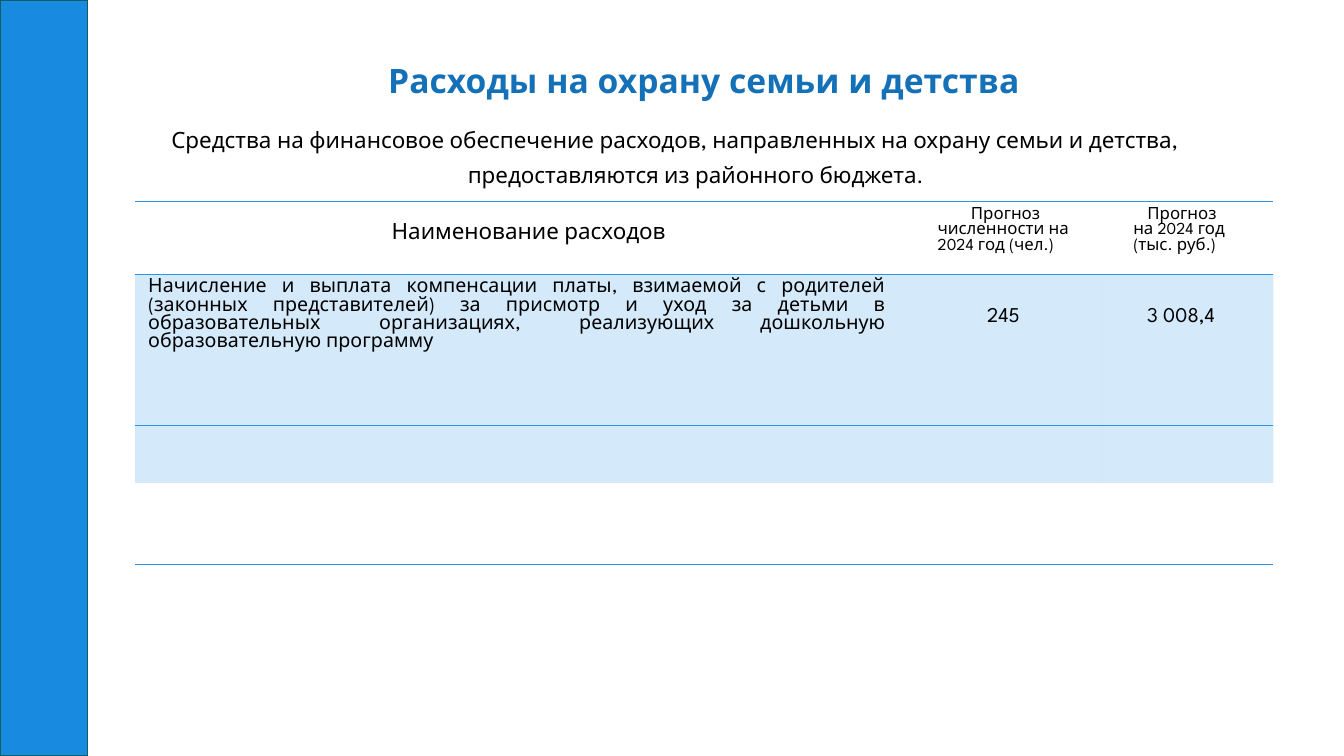
from lxml import etree
from pptx import Presentation
from pptx.dml.color import RGBColor
from pptx.enum import shapes, text
from pptx.oxml import ns
from pptx.util import Inches, Pt

COLORS = {"bar": "188AE0", "bar_line": "0A5F5F", "title": "1571B7",
          "text": "000000", "table": "2995E7"}
FONT = "League Spartan"
ALIGN = text.PP_ALIGN
COLS = [7.81, 1.78, 1.7]
ROWS = [0.72, 1.5, 0.57, 0.81]
SHADED_ROWS = (1, 2)
RULES = {0: ("lnT", "lnB"), 1: ("lnT", "lnB"), 2: ("lnT",), 3: ("lnB",)}

# Text, size, alignment, left / top / right margins, first-line indent
CELLS = {
    (0, 0): ("Наименование расходов", 16, ALIGN.CENTER, 0, 0.22, 0, 0),
    (0, 1): ("Прогноз численности на 2024 год (чел.)", 12, ALIGN.LEFT,
             0.15, 0.06, 0.1, 0.33),
    (0, 2): ("Прогноз на 2024 год (тыс. руб.)", 12, ALIGN.LEFT,
             0.31, 0.06, 0.42, 0.14),
    (1, 0): ("Начисление и выплата компенсации платы, взимаемой с родителей "
             "(законных представителей) за присмотр и уход за детьми в "
             "образовательных организациях, реализующих\tдошкольную "
             "образовательную программу", 14, ALIGN.JUSTIFY, 0.13, 0.05, 0.37, 0),
    (1, 1): ("245", 15, ALIGN.LEFT, 0.64, 0.33, 0, 0),
    (1, 2): ("3 008,4", 15, ALIGN.CENTER, 0, 0.33, 0.13, 0),
}


def rgb(name):
    return RGBColor.from_string(COLORS[name])


def add_xml(parent, tag, **attrs):
    return etree.SubElement(parent, ns.qn(tag), attrs)


def style(p, size, color, bold=False):
    p.font.name, p.font.size, p.font.bold = FONT, Pt(size), bold
    p.font.color.rgb = rgb(color)


def set_indent(p, left, first):
    pPr = p._p.get_or_add_pPr()
    pPr.set("marL", str(Inches(left)))
    pPr.set("indent", str(Inches(first)))
    return pPr


def set_frame(tf, wrap=True):
    tf.margin_left = tf.margin_right = tf.margin_bottom = 0
    tf.margin_top = Inches(0.01)
    tf.vertical_anchor = text.MSO_ANCHOR.TOP
    tf.word_wrap = wrap
    tf.auto_size = text.MSO_AUTO_SIZE.NONE


def add_sidebar(s, box):
    sp = s.shapes.add_shape(shapes.MSO_SHAPE.RECTANGLE, *map(Inches, box))
    sp.shadow.inherit = False
    sp.fill.solid()
    sp.fill.fore_color.rgb = rgb("bar")
    sp.line.color.rgb = rgb("bar_line")
    sp.line.width = Pt(1)


def add_title(s, box):
    sp = s.shapes.title
    sp.left, sp.top, sp.width, sp.height = map(Inches, box)
    tf = sp.text_frame
    set_frame(tf, wrap=False)
    p = tf.paragraphs[0]
    p.text = "Расходы на охрану семьи и детства"
    p.alignment, p.line_spacing, p.space_before = ALIGN.LEFT, 1.3, Pt(0)
    style(p, 24, "title", bold=True)


def add_intro(s, box):
    tf = s.shapes.add_textbox(*map(Inches, box)).text_frame
    set_frame(tf)
    p = tf.paragraphs[0]
    p.text = ("Средства на финансовое обеспечение расходов, направленных на охрану "
              "семьи и детства, предоставляются из районного бюджета.")
    p.line_spacing = 1.3
    set_indent(p, 2.96, -2.94)
    style(p, 16, "text")


def format_cell(cell, row):
    # Fill with 20 % opacity on shaded rows
    if row in SHADED_ROWS:
        cell.fill.solid()
        cell.fill.fore_color.rgb = rgb("table")
        tcPr = cell._tc.get_or_add_tcPr()
        add_xml(tcPr.find(".//" + ns.qn("a:srgbClr")), "a:alpha", val="20000")
    else:
        cell.fill.background()
        tcPr = cell._tc.get_or_add_tcPr()
    # Horizontal rules only
    for i, side in enumerate(("lnL", "lnR", "lnT", "lnB")):
        ln = etree.Element(ns.qn("a:" + side), w=str(Pt(1)))
        if side in RULES[row]:
            add_xml(add_xml(ln, "a:solidFill"), "a:srgbClr", val=COLORS["table"])
        else:
            add_xml(ln, "a:noFill")
        tcPr.insert(i, ln)


def write_cell(cell, label, size, align, left, top, right, first):
    cell.margin_left = cell.margin_bottom = 0
    cell.margin_top, cell.margin_right = Inches(top), Inches(right)
    p = cell.text_frame.paragraphs[0]
    p.text = label
    p.alignment = align
    pPr = set_indent(p, left, first)
    if "\t" in label:
        add_xml(add_xml(pPr, "a:tabLst"), "a:tab", pos=str(Inches(6.42)), algn="l")
    style(p, size, "text")


def add_expenses_table(s, box):
    table = s.shapes.add_table(len(ROWS), len(COLS), *map(Inches, box)).table
    table.first_row = table.horz_banding = False
    for col, width in zip(table.columns, COLS):
        col.width = Inches(width)
    for r, height in enumerate(ROWS):
        table.rows[r].height = Inches(height)
        for c in range(len(COLS)):
            cell = table.cell(r, c)
            format_cell(cell, r)
            if (r, c) in CELLS:
                write_cell(cell, *CELLS[r, c])


def main():
    prs = Presentation()
    prs.slide_width, prs.slide_height = Inches(13.33), Inches(7.5)
    s = prs.slides.add_slide(prs.slide_layouts[5])
    add_sidebar(s, (0, 0, 0.87, 7.5))
    add_title(s, (3.85, 0.46, 6.3, 0.43))
    add_expenses_table(s, (1.34, 2, sum(COLS), sum(ROWS)))
    add_intro(s, (1.68, 1.16, 10.63, 0.56))
    prs.save("out.pptx")


if __name__ == "__main__":
    main()
